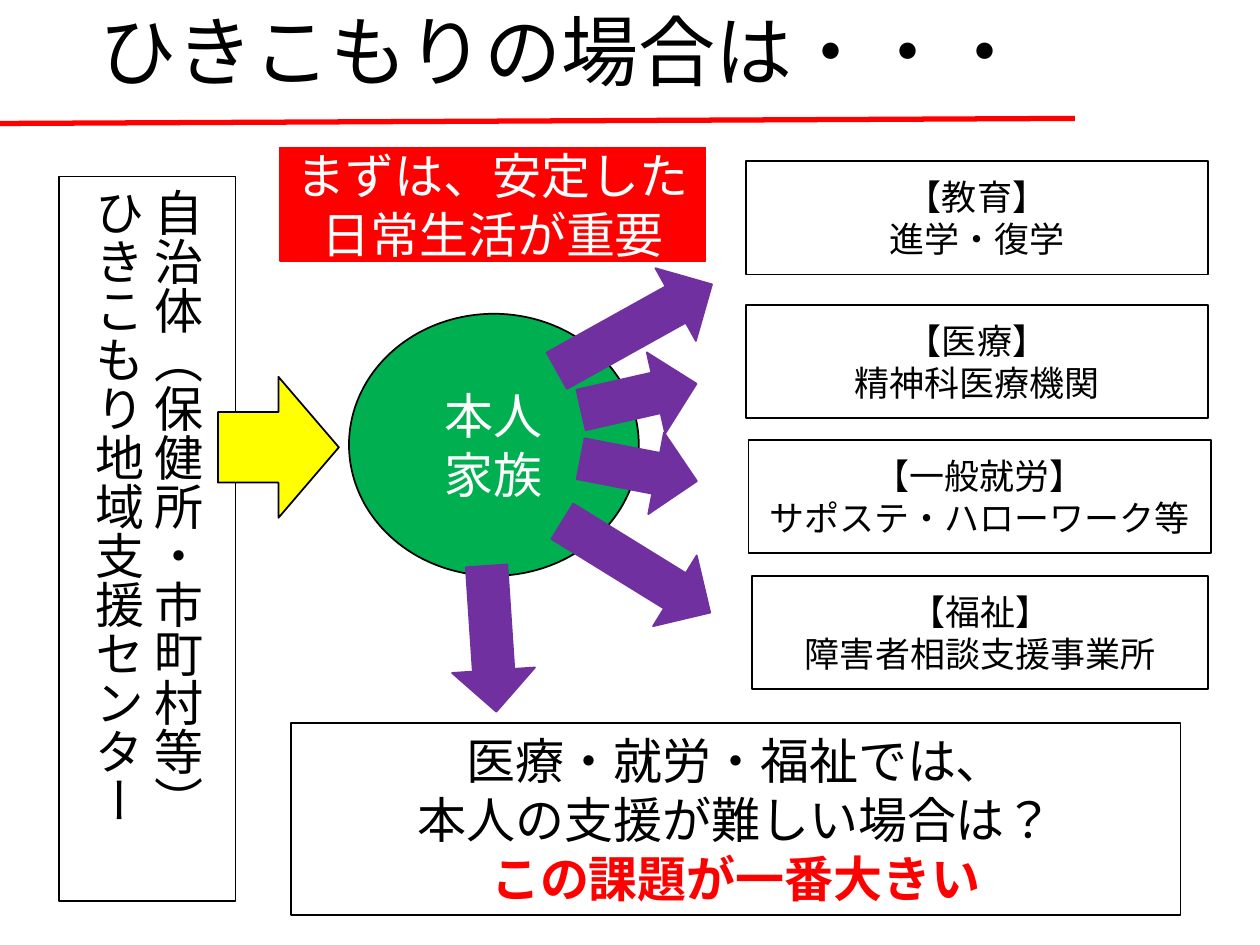
from dataclasses import dataclass

from lxml import etree
from pptx import Presentation
from pptx.dml.color import RGBColor
from pptx.enum.lang import MSO_LANGUAGE_ID
from pptx.enum.shapes import MSO_CONNECTOR, MSO_SHAPE
from pptx.enum.text import MSO_ANCHOR, PP_ALIGN
from pptx.oxml.ns import qn
from pptx.util import Inches, Pt


@dataclass(frozen=True)
class Theme:
    black: str = "000000"
    white: str = "FFFFFF"
    red: str = "FF0000"
    green: str = "00B050"
    purple: str = "7030A0"
    yellow: str = "FFFF00"
    latin: str = "Karla"
    japanese: str = "Noto Sans CJK JP"
    title_size: int = 44
    large_size: int = 28
    small_size: int = 20


theme = Theme()


def write_text(shape, lines, size=theme.large_size, font=theme.latin, color=theme.black,
               align=PP_ALIGN.CENTER, spacing=None, highlight=None):
    """Write one paragraph per line; the highlighted line is bold red."""
    frame = shape.text_frame
    frame.word_wrap = True
    frame.vertical_anchor = MSO_ANCHOR.MIDDLE
    for index, line in enumerate(lines):
        paragraph = frame.paragraphs[0] if index == 0 else frame.add_paragraph()
        paragraph.alignment = align
        paragraph.line_spacing = spacing
        run = paragraph.add_run()
        run.text = line
        run.font.size = Pt(size)
        run.font.name = font
        run.font.language_id = MSO_LANGUAGE_ID.JAPANESE
        run.font.bold = line == highlight
        run.font.color.rgb = RGBColor.from_string(theme.red if line == highlight else color)
        east_asian = etree.SubElement(run.font._element, qn("a:ea"))
        east_asian.set("typeface", font)


def draw_shape(kind, left, top, width, height, fill=theme.white, line=theme.black, rotation=0):
    shape = slide.shapes.add_shape(kind, Inches(left), Inches(top), Inches(width), Inches(height))
    shape.shadow.inherit = False
    shape.rotation = rotation
    shape.fill.solid()
    shape.fill.fore_color.rgb = RGBColor.from_string(fill)
    shape.line.color.rgb = RGBColor.from_string(line)
    shape.line.width = Pt(1)
    return shape


presentation = Presentation()
presentation.slide_width = Inches(10)
presentation.slide_height = Inches(7.5)
slide = presentation.slides.add_slide(presentation.slide_layouts[5])

# Title and the rule under it
title = slide.shapes.title
title.left, title.top = Inches(0.69), Inches(-0.03)
title.width, title.height = Inches(7.84), Inches(0.94)
write_text(title, ["ひきこもりの場合は・・・"], size=theme.title_size, align=PP_ALIGN.LEFT, spacing=0.9)

rule = slide.shapes.add_connector(
    MSO_CONNECTOR.STRAIGHT, Inches(0), Inches(0.98), Inches(8.53), Inches(0.94))
rule.line.color.rgb = RGBColor.from_string(theme.red)
rule.line.width = Pt(3)
etree.SubElement(rule._element.spPr, qn("a:effectLst"))

# Local government, in vertical writing
government = draw_shape(MSO_SHAPE.RECTANGLE, 0.47, 1.4, 1.4, 5.75)
write_text(government, ["自治体（保健所・市町村等）", "ひきこもり地域支援センター"],
           font=theme.japanese, align=PP_ALIGN.LEFT)
government.text_frame._txBody.bodyPr.set("vert", "eaVert")

# Person and family
person = draw_shape(MSO_SHAPE.OVAL, 2.77, 2.49, 2.3, 2.08, fill=theme.green)
write_text(person, ["本人", "家族"], font=theme.japanese, color=theme.white)

# Support fields
fields = [
    (5.92, 1.28, 3.67, ["【教育】", "進学・復学"]),
    (5.92, 2.42, 3.67, ["【医療】", "精神科医療機関"]),
    (5.94, 3.49, 3.67, ["【一般就労】", "サポステ・ハローワーク等"]),
    (5.97, 4.57, 3.62, ["【福祉】", "障害者相談支援事業所"]),
]
for left, top, width, lines in fields:
    field = draw_shape(MSO_SHAPE.RECTANGLE, left, top, width, 0.9)
    write_text(field, lines, size=theme.small_size)

# Remaining issue
issue = draw_shape(MSO_SHAPE.RECTANGLE, 2.31, 5.74, 7.06, 1.52)
write_text(issue, ["医療・就労・福祉では、", "本人の支援が難しい場合は？", "この課題が一番大きい"],
           highlight="この課題が一番大きい")

# Arrows from the person: left, top, width, rotation
arrows = [
    (4.6, 3.4, 0.94, 10.9),
    (4.33, 2.27, 1.41, 330.9),
    (4.36, 4.17, 1.38, 31.7),
    (3.32, 4.74, 1.16, 86.2),
    (4.6, 2.82, 0.94, 347.2),
]
for left, top, width, rotation in arrows:
    draw_shape(MSO_SHAPE.RIGHT_ARROW, left, top, width, 0.66,
               fill=theme.purple, line=theme.purple, rotation=rotation)

# Arrow from the government to the person
draw_shape(MSO_SHAPE.RIGHT_ARROW, 1.73, 2.99, 0.96, 1.12, fill=theme.yellow)

# Key message
message = draw_shape(MSO_SHAPE.RECTANGLE, 2.22, 1.17, 3.38, 0.9, fill=theme.red, line=theme.red)
write_text(message, ["まずは、安定した", "日常生活が重要"], color=theme.white)

presentation.save("out.pptx")
